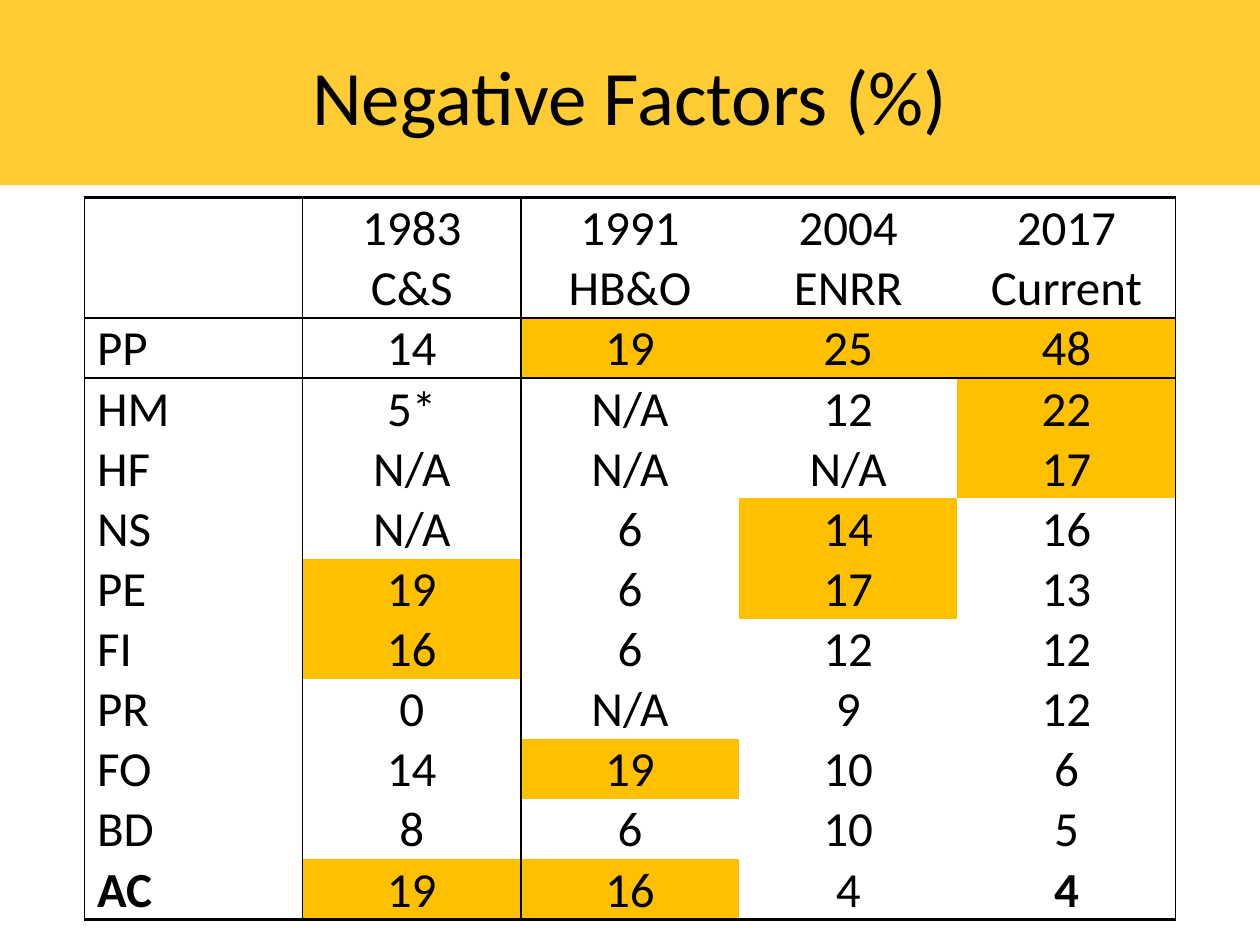
from dataclasses import dataclass

from lxml import etree
from pptx import Presentation
from pptx.dml.color import RGBColor
from pptx.enum.shapes import MSO_SHAPE
from pptx.enum.text import MSO_ANCHOR, PP_ALIGN
from pptx.oxml.ns import qn
from pptx.util import Inches, Pt

RECTANGLE = MSO_SHAPE.RECTANGLE
MIDDLE, BOTTOM = MSO_ANCHOR.MIDDLE, MSO_ANCHOR.BOTTOM
LEFT, CENTER = PP_ALIGN.LEFT, PP_ALIGN.CENTER


@dataclass(frozen=True)
class Theme:
    font: str = "Calibri"
    black: RGBColor = RGBColor(0, 0, 0)
    white: RGBColor = RGBColor(255, 255, 255)
    amber: RGBColor = RGBColor(255, 192, 0)
    title_size: int = 44
    table_size: int = 28


THEME = Theme()

ROWS = [
    ["", "1983", "1991", "2004", "2017"],
    ["", "C&S", "HB&O", "ENRR", "Current"],
    ["PP", "14", "19", "25", "48"],
    ["HM", "5*", "N/A", "12", "22"],
    ["HF", "N/A", "N/A", "N/A", "17"],
    ["NS", "N/A", "6", "14", "16"],
    ["PE", "19", "6", "17", "13"],
    ["FI", "16", "6", "12", "12"],
    ["PR", "0", "N/A", "9", "12"],
    ["FO", "14", "19", "10", "6"],
    ["BD", "8", "6", "10", "5"],
    ["AC", "19", "16", "4", "4"],
]
# Highlighted columns for each row label
HIGHLIGHTS = {
    "PP": (2, 3, 4), "HM": (4,), "HF": (4,), "NS": (3,),
    "PE": (1, 3), "FI": (1,), "FO": (2,), "AC": (1, 2),
}
BOLD_CELLS = {(11, 0), (11, 4)}
# Grid line index: width in points
VERTICAL_RULES = {0: 1, 1: 1, 2: 1, 5: 1}
HORIZONTAL_RULES = {0: 2, 2: 1, 3: 1, 12: 2}


def add_text(paragraph, text, size, alignment, bold=False):
    paragraph.alignment = alignment
    run = paragraph.add_run()
    run.text = text
    run.font.name = THEME.font
    run.font.size = Pt(size)
    run.font.bold = bold
    run.font.color.rgb = THEME.black


def set_border(cell, side, width):
    """Draw one cell edge, or clear it when width is zero."""
    properties = cell._tc.get_or_add_tcPr()
    line = etree.SubElement(properties, qn(f"a:ln{side}"), w=str(Pt(width)))
    if width:
        fill = etree.SubElement(line, qn("a:solidFill"))
        etree.SubElement(fill, qn("a:srgbClr"), val=str(THEME.black))
    else:
        etree.SubElement(line, qn("a:noFill"))


presentation = Presentation()
presentation.slide_width = Inches(10)
presentation.slide_height = Inches(7.5)
slide = presentation.slides.add_slide(presentation.slide_layouts[6])

# Title band
band = slide.shapes.add_shape(RECTANGLE, 0, 0, Inches(10), Inches(1.47))
band.shadow.inherit = False
band.fill.solid()
band.fill.fore_color.rgb = THEME.amber
band.line.fill.background()
band_color = band.fill._xPr.find(qn("a:solidFill")).find(qn("a:srgbClr"))
etree.SubElement(band_color, qn("a:alpha"), val="80000")

title = slide.shapes.add_textbox(Inches(0.5), Inches(0.13), Inches(9), Inches(1.25))
title.text_frame.word_wrap = True
title.text_frame.vertical_anchor = MIDDLE
add_text(title.text_frame.paragraphs[0], "Negative Factors (%)", THEME.title_size, CENTER)

# Table of factors by study
table = slide.shapes.add_table(
    len(ROWS), len(ROWS[0]), Inches(0.67), Inches(1.57), Inches(8.66), Inches(5.72)
).table
table.first_row = False
table.horz_banding = False

for row, values in enumerate(ROWS):
    for column, value in enumerate(values):
        cell = table.cell(row, column)
        is_label = column == 0
        cell.vertical_anchor = BOTTOM
        cell.margin_left = Inches(0.1 if is_label else 0.01)
        cell.margin_right = cell.margin_top = Inches(0.01)
        cell.margin_bottom = 0
        set_border(cell, "L", VERTICAL_RULES.get(column, 0))
        set_border(cell, "R", VERTICAL_RULES.get(column + 1, 0))
        set_border(cell, "T", HORIZONTAL_RULES.get(row, 0))
        set_border(cell, "B", HORIZONTAL_RULES.get(row + 1, 0))
        highlighted = column in HIGHLIGHTS.get(values[0], ())
        cell.fill.solid()
        cell.fill.fore_color.rgb = THEME.amber if highlighted else THEME.white
        if value:
            add_text(cell.text_frame.paragraphs[0], value, THEME.table_size,
                     LEFT if is_label else CENTER, (row, column) in BOLD_CELLS)

presentation.save("out.pptx")
